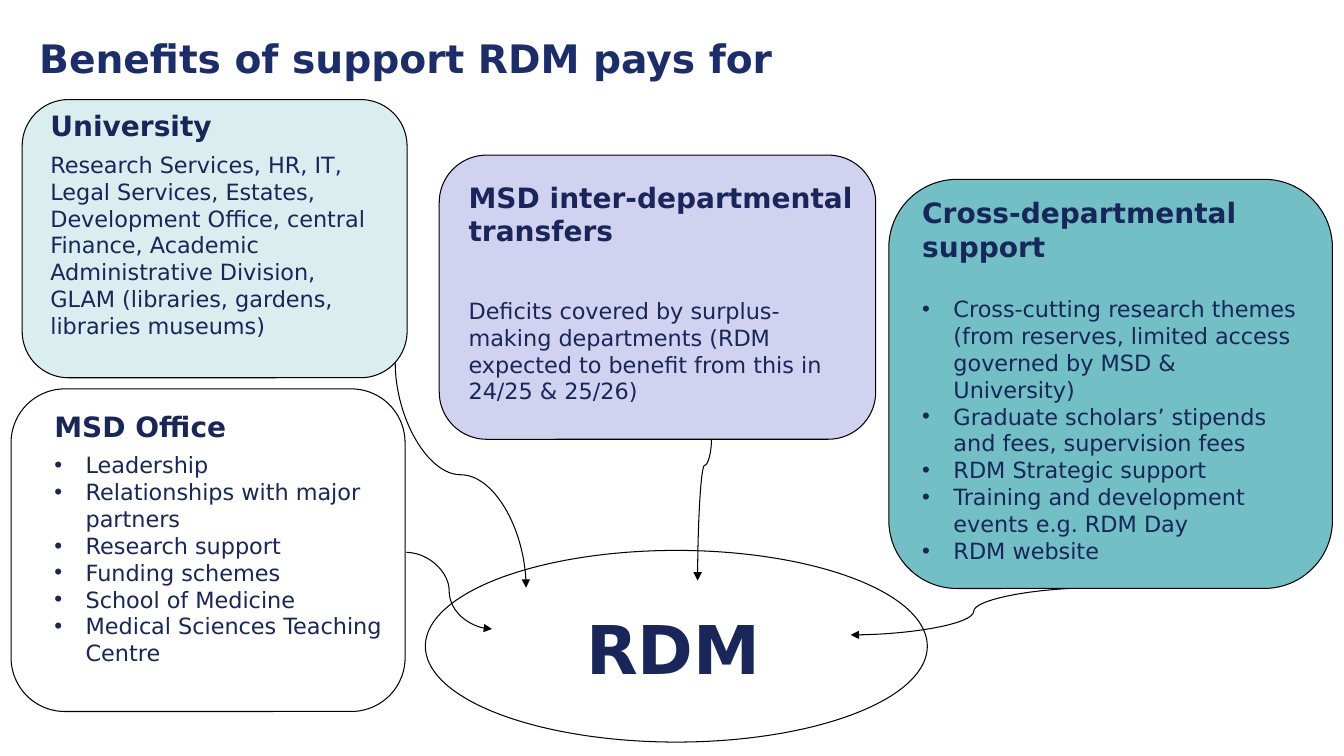
from lxml.etree import SubElement as Sub
from pptx import Presentation
from pptx.dml.color import RGBColor
from pptx.enum.shapes import MSO_CONNECTOR as Link, MSO_SHAPE as Form
from pptx.enum.text import PP_ALIGN as Align
from pptx.oxml.ns import qn
from pptx.util import Cm, Pt

rgb = RGBColor.from_string
INK = "18265A"


def put(frame, text, size=16, bold=False, color=INK, after=0, dot=False, align=Align.LEFT):
    frame.word_wrap = True
    para = frame.paragraphs[0]
    if para.runs:
        para = frame.add_paragraph()
    if dot:
        props = para._p.get_or_add_pPr()
        props.set("marL", str(Cm(0.79)))
        props.set("indent", str(-Cm(0.79)))
        Sub(props, qn("a:buFont")).set("typeface", "Arial")
        Sub(props, qn("a:buChar")).set("char", "•")
    para.alignment = align
    para.space_after = Pt(after)
    run = para.add_run()
    run.text = text
    font = run.font
    font.name = "DejaVu Sans"
    font.size = Pt(size)
    font.bold = bold
    font.color.rgb = rgb(color)


def draw(shapes, form, area, fill=None, line="000000"):
    shape = shapes.add_shape(form, *map(Cm, area))
    shape.shadow.inherit = False
    if fill:
        shape.fill.solid()
        shape.fill.fore_color.rgb = rgb(fill)
    else:
        shape.fill.background()
    if line:
        shape.line.color.rgb = rgb(line)
        shape.line.width = Pt(0.75)
    else:
        shape.line.fill.background()
    return shape


deck = Presentation()
deck.slide_width, deck.slide_height = Cm(33.87), Cm(19.05)
slide = deck.slides.add_slide(deck.slide_layouts[6])
shapes = slide.shapes

title = draw(shapes, Form.RECTANGLE, (0.74, 0.74, 19.81, 1.85), "FFFFFF", None)
title.text_frame.vertical_anchor = 1
put(title.text_frame, "Benefits of support RDM pays for", size=28, bold=True,
    color="1C2D6C", after=12)

curves = [
    (9.96, 9.12, 13.26, 14.81, 270, 50000),
    (17.93, 11.07, 17.58, 14.63, 90, 18500),
    (27.64, 14.81, 21.44, 16, 0, 50000),
    (10.24, 13.92, 12.4, 15.85, 0, 50000),
]
for x1, y1, x2, y2, turn, bend in curves:
    if turn:
        midx, midy = (x1 + x2) / 2, (y1 + y2) / 2
        halfx, halfy = (y2 - y1) / 2, abs(x2 - x1) / 2
        if turn == 270:
            halfx = -halfx
        x1, x2 = midx - halfx, midx + halfx
        y1, y2 = midy - halfy, midy + halfy
    curve = shapes.add_connector(Link.CURVE, Cm(x1), Cm(y1), Cm(x2), Cm(y2))
    curve.line.color.rgb = rgb("000000")
    curve.line.width = Pt(0.75)
    props = curve._element.spPr
    if turn:
        props.find(qn("a:xfrm")).set("rot", str(turn * 60000))
    guide = Sub(props.find(qn("a:prstGeom")).find(qn("a:avLst")), qn("a:gd"))
    guide.set("name", "adj1")
    guide.set("fmla", f"val {bend}")
    Sub(props.find(qn("a:ln")), qn("a:tailEnd")).set("type", "triangle")
    Sub(props, qn("a:effectLst"))

cards = [
    ((22.4, 4.52, 11.18, 10.31), "72BFC5", (22.99, 4.8, 10.13, 11.96),
     "Cross-departmental support", 23.3, True, [
        "Cross-cutting research themes (from reserves, limited access governed by MSD & University)",
        "Graduate scholars’ stipends and fees, supervision fees",
        "RDM Strategic support",
        "Training and development events e.g. RDM Day",
        "RDM website",
    ]),
    ((0.56, 2.51, 9.7, 7.01), "DAEDEF", (1.02, 2.62, 8.94, 7.14),
     "University", 6, False, [
        "Research Services, HR, IT, Legal Services, Estates, Development Office, "
        "central Finance, Academic Administrative Division, GLAM (libraries, "
        "gardens, libraries museums)",
    ]),
    ((0.28, 9.8, 9.93, 8.13), None, (1.12, 10.19, 9.19, 6.81),
     "MSD Office", 6, True, [
        "Leadership",
        "Relationships with major partners",
        "Research support",
        "Funding schemes",
        "School of Medicine",
        "Medical Sciences Teaching Centre",
    ]),
    ((11.07, 3.91, 11, 7.16), "D1D1F0", (11.56, 4.42, 10.19, 7.42),
     "MSD inter-departmental transfers", 35.3, False, [
        "Deficits covered by surplus- making departments (RDM expected to benefit "
        "from this in 24/25 & 25/26)",
    ]),
]
for area, fill, inner, head, gap, dot, items in cards:
    group = shapes.add_group_shape().shapes
    draw(group, Form.ROUNDED_RECTANGLE, area, fill)
    frame = group.add_textbox(*map(Cm, inner)).text_frame
    put(frame, head, size=20, bold=True, after=gap)
    for item in items:
        put(frame, item, dot=dot)

draw(shapes, Form.OVAL, (10.72, 13.87, 12.65, 4.83))
label = shapes.add_textbox(Cm(10.67), Cm(15.19), Cm(12.6), Cm(2.31))
put(label.text_frame, "RDM", size=48, bold=True, align=Align.CENTER)

deck.save("out.pptx")
